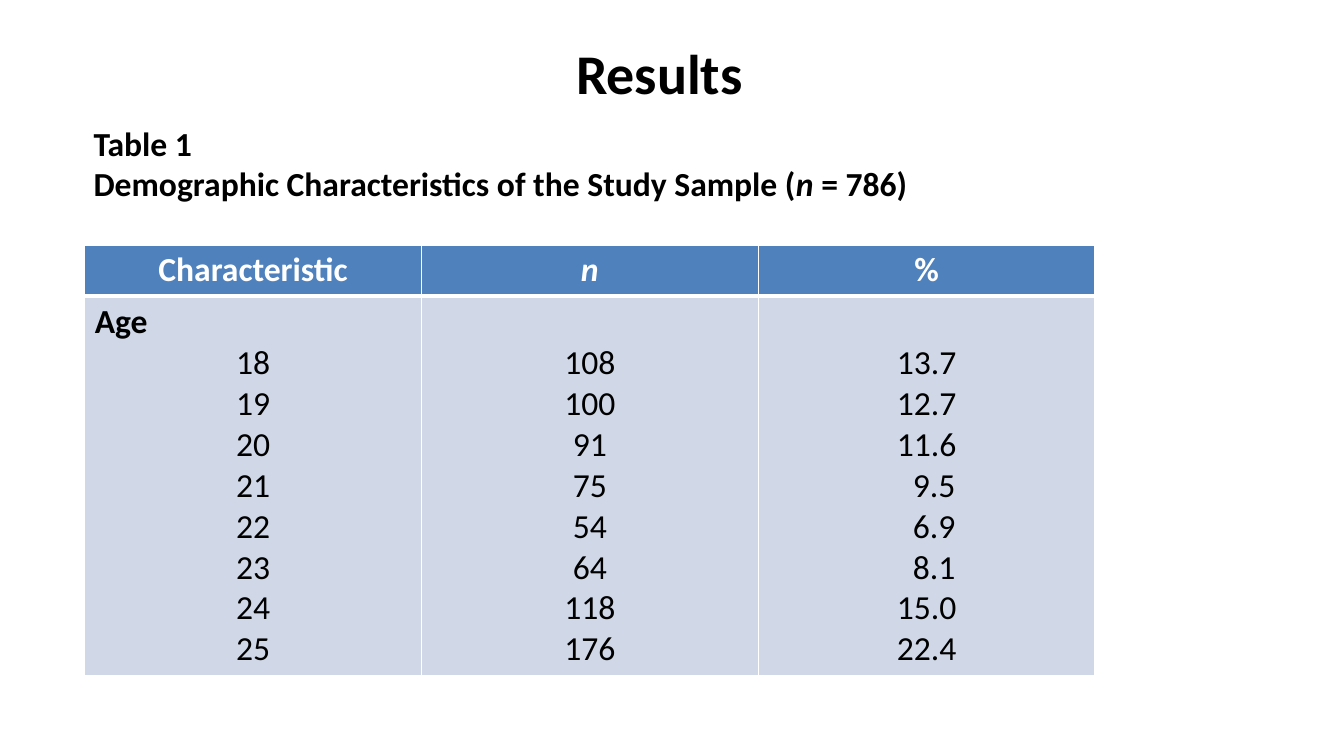
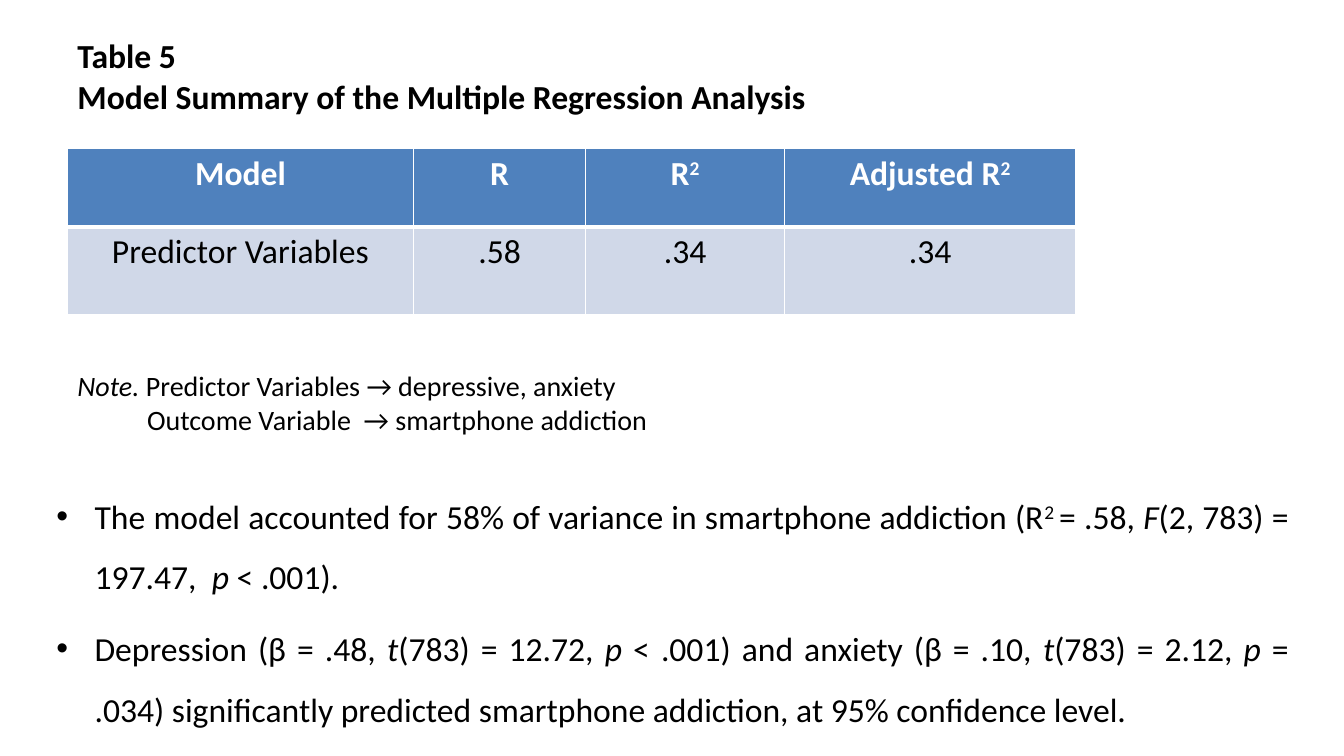
from lxml import etree
from pptx import Presentation
from pptx.dml.color import RGBColor
from pptx.enum.text import MSO_ANCHOR as Anchor, PP_ALIGN as Align
from pptx.oxml.ns import qn
from pptx.util import Pt

PX = 9144  # 100 px to the inch
SLIDE_SIZE = 1333, 750
FONT = "Calibri"
BLACK = RGBColor(0x00, 0x00, 0x00)
WHITE = RGBColor(0xFF, 0xFF, 0xFF)
HEADER_BLUE = RGBColor(0x4F, 0x81, 0xBD)
BODY_BLUE = RGBColor(0xD0, 0xD8, 0xE8)

# Text formats: size, bold and color go to runs, the rest to paragraphs
TITLE = {"size": 40, "bold": True, "color": BLACK, "alignment": Align.CENTER}
CAPTION = {"size": 24, "bold": True, "color": BLACK}
HEADER = {"size": 24, "bold": True, "color": WHITE, "alignment": Align.CENTER}
CELL = {"size": 24, "bold": False, "color": BLACK, "alignment": Align.CENTER}
GROUP = {**CELL, "bold": True, "alignment": Align.LEFT}
NARROW = {**CELL, "margin": 15}
NOTE = {"size": 20, "color": BLACK}
NOTE_INDENTED = {**NOTE, "margin": 69}
BULLET = {"size": 24, "color": BLACK, "alignment": Align.JUSTIFY, "line_spacing": 1.5,
          "space_after": Pt(8), "margin": 38, "bullet": "•"}


def italic(text):
    return text, {"italic": True}


def raised(text):
    return text, {"baseline": 30000}


# A paragraph is (format, run, run, ...); a run is a string or (string, changes)
AGES = [(18, 108, 13.7), (19, 100, 12.7), (20, 91, 11.6), (21, 75, 9.5),
        (22, 54, 6.9), (23, 64, 8.1), (24, 118, 15.0), (25, 176, 22.4)]

SAMPLE_TABLE = {
    "place": (84, 243), "columns": [334, 334, 334], "rows": [50, 375],
    "header": [(HEADER, "Characteristic"), (HEADER, italic("n")), (HEADER, "%")],
    "body": [
        [(GROUP, "Age")] + [(CELL, str(age)) for age, _, _ in AGES],
        [(CELL, str(count)) for _, count, _ in AGES],
        [(NARROW if share < 10 else CELL, f"{share:.1f}") for _, _, share in AGES],
    ],
    "anchor": Anchor.BOTTOM,
}
MODEL_TABLE = {
    "place": (67, 147), "columns": [343, 171, 197, 289], "rows": [78, 87],
    "header": [(HEADER, "Model"), (HEADER, "R"), (HEADER, "R", raised("2")),
               (HEADER, "Adjusted R", raised("2"))],
    "body": [[(CELL, text)] for text in ("Predictor Variables", ".58", ".34", ".34")],
    "anchor": Anchor.TOP,
}

SLIDES = [
    {"table": SAMPLE_TABLE, "texts": [
        ((300, 33, 708, 77), [(TITLE, "Results")]),
        ((83, 117, 900, 100), [
            (CAPTION, "Table 1"),
            (CAPTION, "Demographic Characteristics of the Study Sample (",
             italic("n "), "= 786)")]),
    ]},
    {"table": MODEL_TABLE, "texts": [
        ((67, 30, 1200, 100), [
            (CAPTION, "Table 5"),
            (CAPTION, "Model Summary of the Multiple Regression Analysis")]),
        ((67, 361, 1067, 77), [
            (NOTE, italic("Note. "), "Predictor Variables → depressive, anxiety"),
            (NOTE_INDENTED, "Outcome Variable  → smartphone addiction")]),
        ((46, 467, 1242, 257), [
            (BULLET, "The model accounted for 58% of variance in smartphone addiction (R",
             raised("2 "), "= .58, ", italic("F"), "(2, 783) = 197.47,  ",
             italic("p "), "< .001)."),
            (BULLET, "Depression (β = .48, ", italic("t"), "(783) = 12.72, ", italic("p"),
             " < .001) and anxiety (β = .10, ", italic("t"), "(783) = 2.12, ", italic("p"),
             " = .034) significantly predicted smartphone addiction, "
             "at 95% confidence level.")]),
    ]},
]


def scaled(*lengths):
    return [length * PX for length in lengths]


def add_run(paragraph, text, values):
    run = paragraph.add_run()
    run.text = text
    run.font.name = FONT
    for name, value in values.items():
        if name == "color":
            run.font.color.rgb = value
        elif name == "size":
            run.font.size = Pt(value)
        elif name == "baseline":
            run._r.get_or_add_rPr().set("baseline", str(value))
        else:
            setattr(run.font, name, value)


def format_paragraph(paragraph, values):
    for name, value in values.items():
        properties = paragraph._p.get_or_add_pPr()
        if name == "margin":
            properties.set("marL", str(value * PX))
        elif name == "bullet":
            properties.set("indent", str(-values["margin"] * PX))
            etree.SubElement(properties, qn("a:buFont"), typeface="Arial")
            etree.SubElement(properties, qn("a:buChar"), char=value)
        else:
            setattr(paragraph, name, value)


def write(frame, paragraphs):
    for index, (values, *runs) in enumerate(paragraphs):
        paragraph = frame.add_paragraph() if index else frame.paragraphs[0]
        font_values = {name: values[name] for name in ("size", "bold", "color")
                       if name in values}
        format_paragraph(paragraph, {name: value for name, value in values.items()
                                     if name not in font_values})
        for run in runs:
            text, changes = (run, {}) if isinstance(run, str) else run
            add_run(paragraph, text, {**font_values, **changes})


def add_text(slide, place, paragraphs):
    frame = slide.shapes.add_textbox(*scaled(*place)).text_frame
    frame.word_wrap = True
    write(frame, paragraphs)


def set_borders(cell, widths):
    """Draw white borders; widths are points by side, in the order L, R, T, B."""
    properties = cell._tc.get_or_add_tcPr()
    for side, width in widths.items():
        line = etree.SubElement(properties, qn(f"a:ln{side}"), w=str(Pt(width)))
        fill = etree.SubElement(line, qn("a:solidFill"))
        etree.SubElement(fill, qn("a:srgbClr"), val=str(WHITE))


def add_table(slide, content):
    columns, rows = content["columns"], content["rows"]
    table = slide.shapes.add_table(
        len(rows), len(columns),
        *scaled(*content["place"], sum(columns), sum(rows))).table
    table.horz_banding = False
    for row, height in zip(table.rows, rows):
        row.height = height * PX
    header = [[paragraph] for paragraph in content["header"]]
    row_styles = [
        (header, HEADER_BLUE, {"L": 1, "R": 1, "T": 1, "B": 3}, Anchor.TOP),
        (content["body"], BODY_BLUE, {"L": 1, "R": 1, "T": 3, "B": 1}, content["anchor"]),
    ]
    for row_index, (texts, color, borders, anchor) in enumerate(row_styles):
        for column_index, paragraphs in enumerate(texts):
            table.columns[column_index].width = columns[column_index] * PX
            cell = table.cell(row_index, column_index)
            set_borders(cell, borders)
            cell.fill.solid()
            cell.fill.fore_color.rgb = color
            cell.vertical_anchor = anchor
            write(cell.text_frame, paragraphs)


def main():
    presentation = Presentation()
    presentation.slide_width, presentation.slide_height = scaled(*SLIDE_SIZE)
    for content in SLIDES:
        slide = presentation.slides.add_slide(presentation.slide_layouts[6])
        add_table(slide, content["table"])
        for place, paragraphs in content["texts"]:
            add_text(slide, place, paragraphs)
    presentation.save("out.pptx")


if __name__ == "__main__":
    main()
